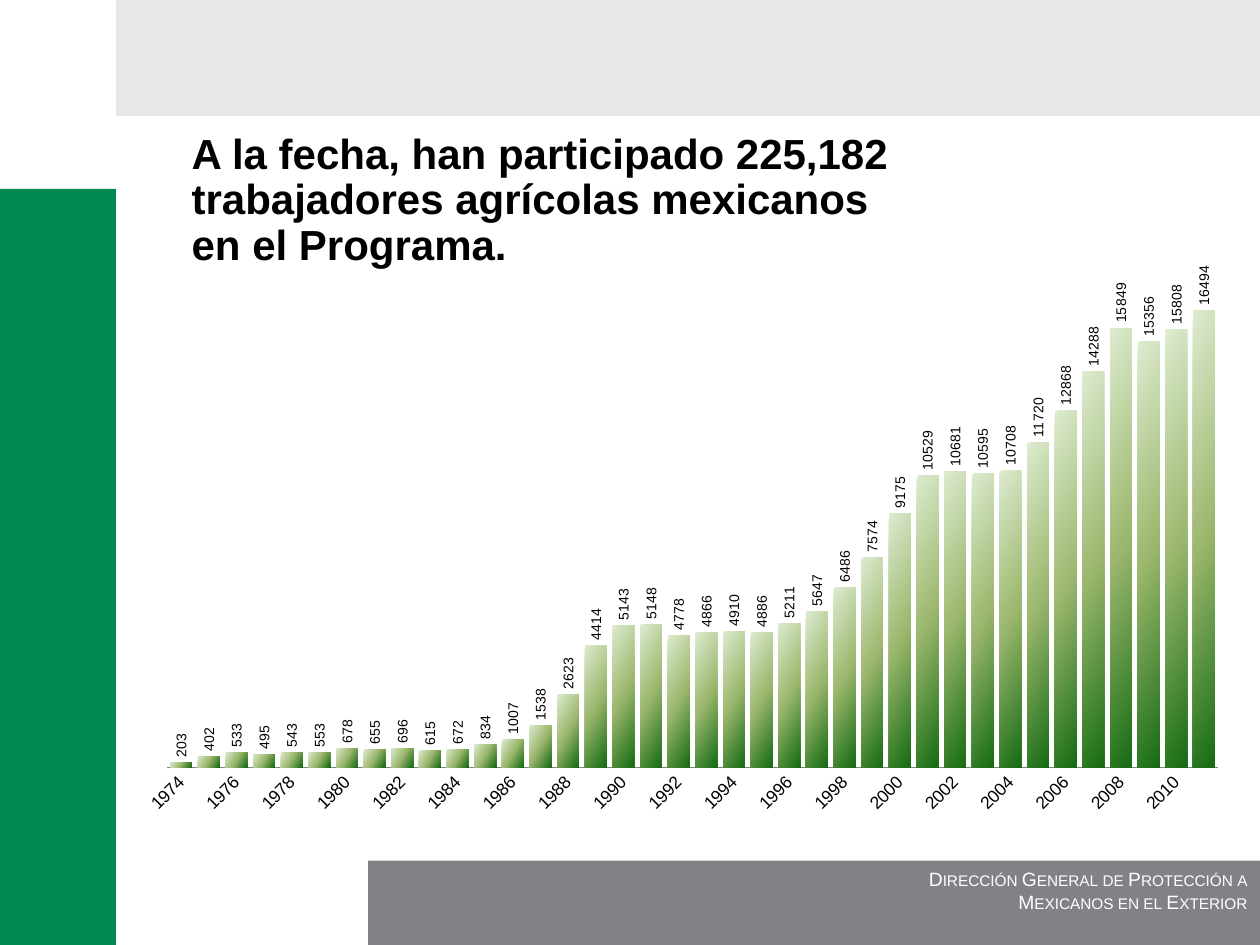
from dataclasses import dataclass

from pptx import Presentation
from pptx.chart.data import CategoryChartData
from pptx.dml.color import RGBColor
from pptx.enum.chart import XL_CHART_TYPE as ChartType, XL_LABEL_POSITION as LabelPosition
from pptx.enum.chart import XL_TICK_MARK as TickMark
from pptx.enum.shapes import MSO_SHAPE as Preset
from pptx.enum.text import MSO_ANCHOR as Anchor, MSO_AUTO_SIZE as AutoSize, PP_ALIGN as Align
from pptx.oxml import parse_xml
from pptx.oxml.ns import nsdecls, qn
from pptx.util import Cm, Pt

GREEN = RGBColor(0x00, 0x87, 0x52)
DARK_GRAY = RGBColor(0x81, 0x82, 0x85)
LIGHT_GRAY = RGBColor(0xE7, 0xE7, 0xE8)
WHITE = RGBColor(0xFF, 0xFF, 0xFF)
BLACK = RGBColor(0x00, 0x00, 0x00)
BAR_STOPS = (
    (0, RGBColor(0xDD, 0xEB, 0xCF)),
    (50, RGBColor(0x9C, 0xB8, 0x6E)),
    (100, RGBColor(0x15, 0x6B, 0x13)),
)
FONT = "Arial"

HEADING = (
    "A la fecha, han participado 225,182",
    "trabajadores agrícolas mexicanos",
    "en el Programa.",
)
OFFICE = ("Dirección General de Protección a", "Mexicanos en el Exterior")
FIRST_YEAR = 1974
WORKERS = (
    203, 402, 533, 495, 543, 553, 678, 655, 696, 615,
    672, 834, 1007, 1538, 2623, 4414, 5143, 5148, 4778, 4866,
    4910, 4886, 5211, 5647, 6486, 7574, 9175, 10529, 10681, 10595,
    10708, 11720, 12868, 14288, 15849, 15356, 15808, 16494,
)


@dataclass(frozen=True)
class Band:
    left: float
    top: float
    width: float
    height: float
    color: RGBColor
    lines: tuple = ()


BANDS = (
    Band(0, 3.81, 2.34, 15.24, GREEN),
    Band(7.42, 17.35, 17.98, 1.7, DARK_GRAY, OFFICE),
    Band(2.34, 0, 23.06, 2.34, LIGHT_GRAY),
)


def add_line(frame, index: int, text: str, size: float, color: RGBColor, align):
    paragraph = frame.paragraphs[0] if index == 0 else frame.add_paragraph()
    paragraph.alignment = align
    run = paragraph.add_run()
    run.text = text
    run.font.size = Pt(size)
    run.font.color.rgb = color
    run.font.name = FONT
    return paragraph, run


def draw_band(slide, band: Band) -> None:
    shape = slide.shapes.add_shape(
        Preset.RECTANGLE, Cm(band.left), Cm(band.top), Cm(band.width), Cm(band.height))
    shape.shadow.inherit = False
    shape.fill.solid()
    shape.fill.fore_color.rgb = band.color
    shape.line.fill.background()
    frame = shape.text_frame
    frame.vertical_anchor = Anchor.TOP
    for index, text in enumerate(band.lines):
        _, run = add_line(frame, index, text, 11, WHITE, Align.RIGHT)
        run._r.get_or_add_rPr().set("cap", "small")


def draw_heading(slide) -> None:
    heading = slide.shapes.title
    heading.left, heading.top = Cm(3.61), Cm(2.54)
    heading.width, heading.height = Cm(19.89), Cm(3.02)
    frame = heading.text_frame
    frame.word_wrap = True
    frame.auto_size = AutoSize.SHAPE_TO_FIT_TEXT
    frame.vertical_anchor = Anchor.TOP
    for index, text in enumerate(HEADING):
        paragraph, run = add_line(frame, index, text, 24, BLACK, Align.JUSTIFY)
        paragraph.line_spacing = Pt(26)
        paragraph.space_before = Pt(0)
        properties = paragraph._p.get_or_add_pPr()
        properties.set("marL", str(Cm(1.02)))
        properties.set("indent", str(-Cm(1.02)))
        run.font.bold = True
        shadow = parse_xml(
            f'<a:effectLst {nsdecls("a")}><a:outerShdw blurRad="{Pt(3)}" dist="{Pt(3)}" '
            'dir="5400000" algn="tl"><a:srgbClr val="000000"><a:alpha val="43000"/>'
            '</a:srgbClr></a:outerShdw></a:effectLst>')
        run._r.rPr.find(qn("a:latin")).addprevious(shadow)


def paint_bars(series) -> None:
    series.format.fill.gradient()
    properties = series.format.fill._xPr
    stops = "".join(
        f'<a:gs pos="{position * 1000}"><a:srgbClr val="{color}"/></a:gs>'
        for position, color in BAR_STOPS)
    gradient = parse_xml(
        f'<a:gradFill {nsdecls("a")} rotWithShape="1"><a:gsLst>{stops}</a:gsLst>'
        '<a:lin ang="1800000" scaled="0"/></a:gradFill>')
    properties.replace(properties.find(qn("a:gradFill")), gradient)
    series.format.line.fill.background()


def rotate(text_properties, degrees: int) -> None:
    body = text_properties.find(qn("a:bodyPr"))
    body.set("rot", str(degrees * 60000))
    body.set("vert", "horz")


def place_plot(chart, x: float, y: float, width: float, height: float) -> None:
    plot_area = chart._chartSpace.chart.plotArea
    for previous in plot_area.findall(qn("c:layout")):
        plot_area.remove(previous)
    sizes = "".join(
        f'<c:{tag} val="{value}"/>'
        for tag, value in (("x", x), ("y", y), ("w", width), ("h", height)))
    plot_area.insert(0, parse_xml(
        f'<c:layout {nsdecls("c")}><c:manualLayout><c:layoutTarget val="inner"/>'
        f'<c:xMode val="edge"/><c:yMode val="edge"/>{sizes}</c:manualLayout></c:layout>'))


def draw_chart(slide) -> None:
    data = CategoryChartData()
    data.categories = [str(FIRST_YEAR + offset) for offset in range(len(WORKERS))]
    data.add_series("Series 1", WORKERS)
    chart = slide.shapes.add_chart(
        ChartType.COLUMN_CLUSTERED, Cm(2.97), Cm(5.08), Cm(21.59), Cm(11.43), data).chart
    chart.has_legend = False
    chart.has_title = False
    chart.font.name = FONT
    chart.font.size = Pt(10)
    chart.font.color.rgb = BLACK

    plot = chart.plots[0]
    plot.gap_width = 27
    plot.vary_by_categories = False
    paint_bars(plot.series[0])
    plot.has_data_labels = True
    labels = plot.data_labels
    labels.show_value = True
    labels.position = LabelPosition.OUTSIDE_END
    labels.font.name = FONT
    labels.font.size = Pt(8)
    labels.font.color.rgb = BLACK
    rotate(labels._element.find(qn("c:txPr")), -90)

    counts = chart.value_axis
    counts.minimum_scale, counts.maximum_scale = 0, 18000
    counts.has_major_gridlines = False
    counts.visible = False

    years = chart.category_axis
    years.major_tick_mark = years.minor_tick_mark = TickMark.NONE
    years.format.line.color.rgb = DARK_GRAY
    years.tick_labels.font.size = Pt(10)
    rotate(years._element.find(qn("c:txPr")), -45)
    years._element.find(qn("c:noMultiLvlLbl")).addprevious(
        parse_xml(f'<c:tickLblSkip {nsdecls("c")} val="2"/>'))
    place_plot(chart, 0.017, 0.029, 0.983, 0.881)


def main() -> None:
    deck = Presentation()
    deck.slide_width, deck.slide_height = Cm(25.4), Cm(19.05)
    slide = deck.slides.add_slide(deck.slide_layouts[5])
    for band in BANDS:
        draw_band(slide, band)
    draw_heading(slide)
    draw_chart(slide)
    deck.save("out.pptx")


if __name__ == "__main__":
    main()
